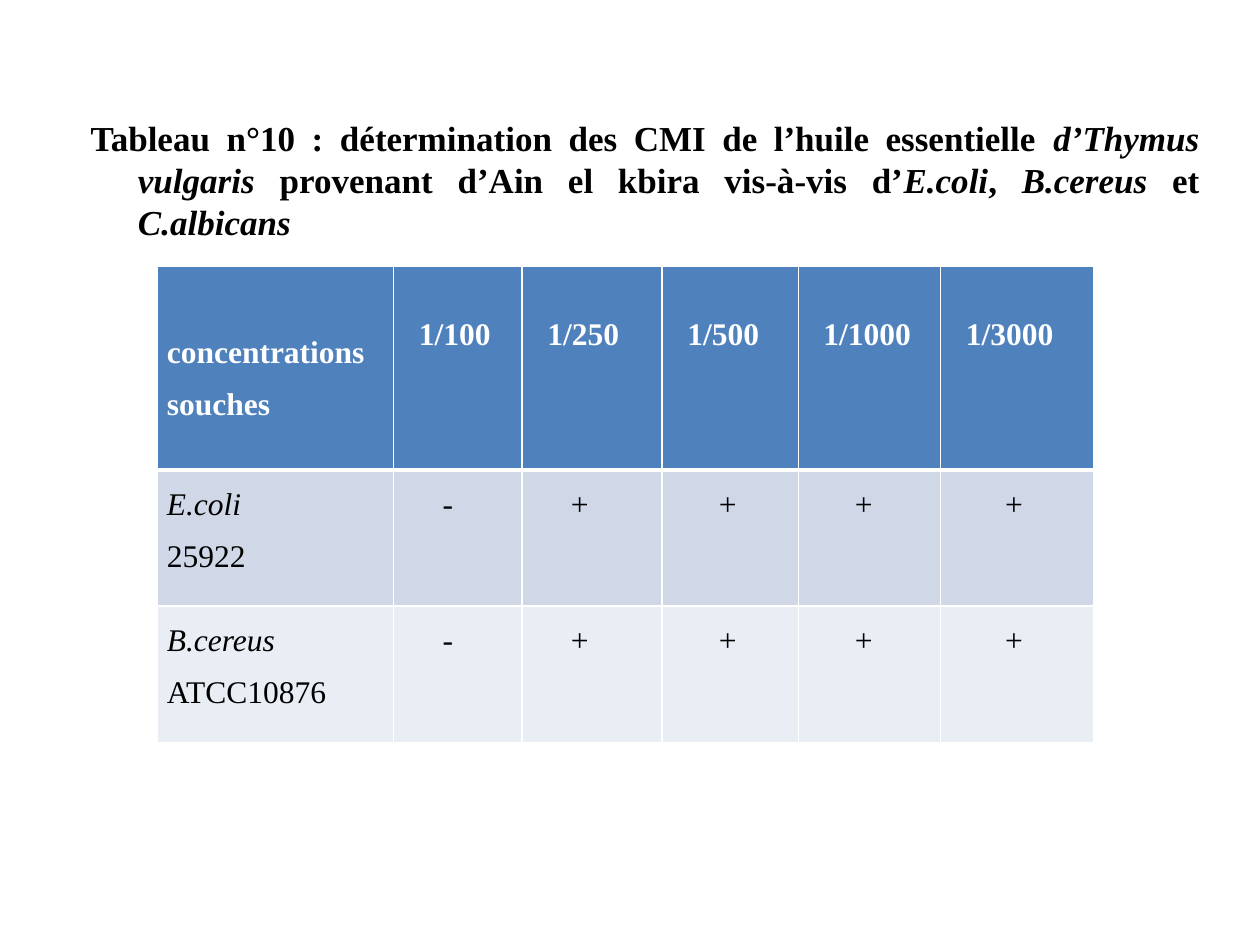
import pptx
import pptx.dml.color
import pptx.enum.text
import pptx.oxml
import pptx.oxml.ns
import pptx.util
from lxml import etree

Pt = pptx.util.Pt
RGBColor = pptx.dml.color.RGBColor
JUSTIFY = pptx.enum.text.PP_ALIGN.JUSTIFY
qn = pptx.oxml.ns.qn

WHITE = RGBColor(0xFF, 0xFF, 0xFF)
BLACK = RGBColor(0x00, 0x00, 0x00)
BLUE = RGBColor(0x4F, 0x81, 0xBD)
BAND_DARK = RGBColor(0xD0, 0xD8, 0xE8)
BAND_LIGHT = RGBColor(0xE9, 0xED, 0xF4)

CAPTION = [
    ("Tableau n°10 : détermination des CMI de l’huile essentielle ", False),
    ("d’Thymus vulgaris ", True),
    ("provenant d’Ain el kbira vis-à-vis d’", False),
    ("E.coli", True),
    (", ", False),
    ("B.cereus ", True),
    ("et ", False),
    ("C.albicans", True),
]
COLUMNS = [135, 73.4, 80, 77.8, 81.4, 87.2]
ROWS = [116.6, 77.8, 77.8]
CONCENTRATIONS = ["1/100", "1/250", "1/500", "1/1000", "1/3000"]
STRAINS = [
    ([[("E.coli", True)], [("25922", False)]], BAND_DARK),
    ([[("B.cereus ", True), ("ATCC10876", False)]], BAND_LIGHT),
]
RESULTS = ["-", "+", "+", "+", "+"]
RESULT_INDENTS = [22.5, 22.5, 27, 27, 31.5]


def add_run(p, text, size=18, color=BLACK, bold=False, italic=False, font="Times New Roman"):
    r = p.add_run()
    r.text = text
    r.font.name = font
    r.font.size = Pt(size)
    r.font.color.rgb = color
    r.font.bold = bold
    r.font.italic = italic


class Deck:
    """Holds the table style and the current slide."""

    inset = 5.4
    line_spacing = 1.5

    def __init__(self):
        self.prs = pptx.Presentation()
        self.prs.slide_width = Pt(720)
        self.prs.slide_height = Pt(540)
        self.s = self.prs.slides.add_slide(self.prs.slide_layouts[1])
        title = self.s.shapes.title.element
        title.getparent().remove(title)

    def caption(self, runs, x, y, w, h, top):
        sp = self.s.placeholders[1]
        sp.left, sp.top, sp.width, sp.height = Pt(x), Pt(y), Pt(w), Pt(h)
        tf = sp.text_frame
        tf.word_wrap = True
        tf.margin_top = Pt(top)
        p = tf.paragraphs[0]
        p.alignment = JUSTIFY
        p.space_before = Pt(0)
        pPr = p._p.get_or_add_pPr()
        pPr.set("marL", str(Pt(27)))
        pPr.set("indent", str(-Pt(27)))
        etree.SubElement(pPr, qn("a:buNone"))
        for text, italic in runs:
            add_run(p, text, size=20, bold=True, italic=italic)

    def table(self, x, y, columns, rows):
        frame = self.s.shapes.add_table(
            len(rows), len(columns), Pt(x), Pt(y), Pt(sum(columns)), Pt(sum(rows)))
        tbl = frame.table
        for column, width in zip(tbl.columns, columns):
            column.width = Pt(width)
        for row, height in zip(tbl.rows, rows):
            row.height = Pt(height)
        return tbl

    def cell(self, cell, paragraphs, fill, indent=0, top=0, color=BLACK, bold=False, bottom=1):
        cell.margin_left = Pt(self.inset + indent)
        cell.margin_right = Pt(self.inset)
        cell.margin_top = Pt(top)
        cell.margin_bottom = Pt(0)
        tf = cell.text_frame
        for i, runs in enumerate(paragraphs):
            p = tf.add_paragraph() if i else tf.paragraphs[0]
            p.alignment = JUSTIFY
            p.line_spacing = self.line_spacing
            for text, italic in runs:
                add_run(p, text, color=color, bold=bold, italic=italic)
        self.borders(cell, bottom)
        cell.fill.solid()
        cell.fill.fore_color.rgb = fill

    def borders(self, cell, bottom):
        tcPr = cell._tc.get_or_add_tcPr()
        for side, width in (("L", 1), ("R", 1), ("T", 1), ("B", bottom)):
            ln = etree.SubElement(tcPr, qn(f"a:ln{side}"), w=str(Pt(width)))
            fill = etree.SubElement(ln, qn("a:solidFill"))
            etree.SubElement(fill, qn("a:srgbClr"), val=str(WHITE))


def main():
    deck = Deck()
    deck.caption(CAPTION, 44.6, 33.8, 648, 446.4, top=33)
    tbl = deck.table(90, 152, COLUMNS, ROWS)

    header = {"fill": BLUE, "color": WHITE, "bold": True, "bottom": 3}
    deck.cell(tbl.cell(0, 0), [[("concentrations", False)], [("souches", False)]],
              top=29.5, **header)
    for c, text in enumerate(CONCENTRATIONS, 1):
        deck.cell(tbl.cell(0, c), [[(text, False)]], indent=9, top=19.5, **header)

    for r, (strain, fill) in enumerate(STRAINS, 1):
        deck.cell(tbl.cell(r, 0), strain, fill)
        for c, (text, indent) in enumerate(zip(RESULTS, RESULT_INDENTS), 1):
            deck.cell(tbl.cell(r, c), [[(text, False)]], fill, indent=indent)

    deck.prs.save("out.pptx")


if __name__ == "__main__":
    main()
